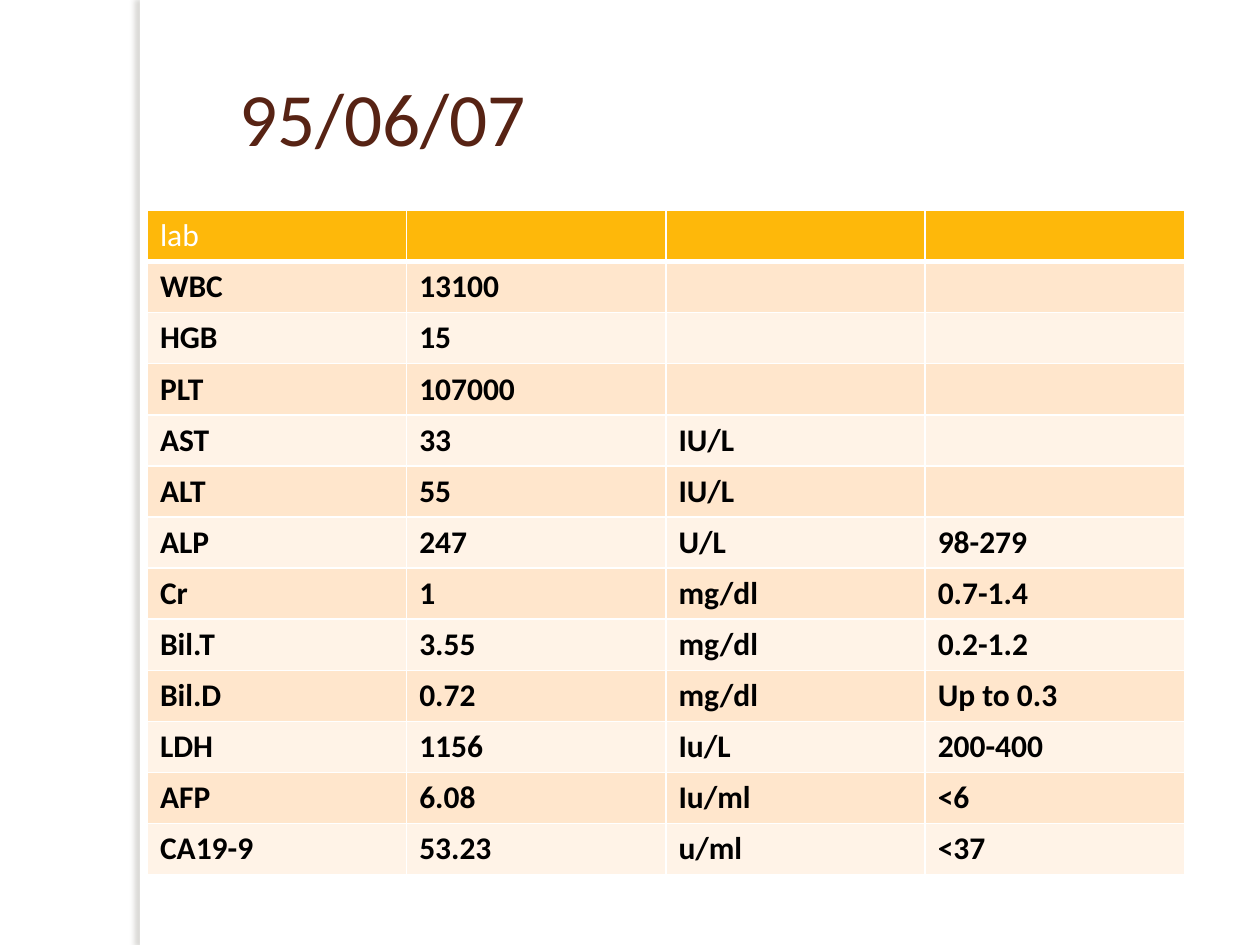
from lxml.etree import SubElement
from pptx import Presentation
from pptx.dml.color import RGBColor
from pptx.enum.shapes import MSO_SHAPE as Shape
from pptx.enum.text import MSO_ANCHOR as Anchor
from pptx.oxml.ns import qn
from pptx.util import Inches, Pt

TITLE = "95/06/07"
LABS = [
    ("lab", "", "", ""),
    ("WBC", "13100", "", ""),
    ("HGB", "15", "", ""),
    ("PLT", "107000", "", ""),
    ("AST", "33", "IU/L", ""),
    ("ALT", "55", "IU/L", ""),
    ("ALP", "247", "U/L", "98-279"),
    ("Cr", "1", "mg/dl", "0.7-1.4"),
    ("Bil.T", "3.55", "mg/dl", "0.2-1.2"),
    ("Bil.D", "0.72", "mg/dl", "Up to 0.3"),
    ("LDH", "1156", "Iu/L", "200-400"),
    ("AFP", "6.08", "Iu/ml", "<6"),
    ("CA19-9", "53.23", "u/ml", "<37"),
]
WHITE, HEADER, BANDS = "FFFFFF", "FEB80A", ("FFF3E7", "FFE6CC")
TITLE_FORMAT = {"name": "Calibri", "size": Pt(43)}
HEADER_FORMAT = {"name": "Calibri", "size": Pt(18), "bold": False}
BODY_FORMAT = {**HEADER_FORMAT, "bold": True}
WIDTH, HEIGHT = 10, 7.5
TABLE_AREA = (1.17, 1.67, 8.23, 5.27)


def paint(fill, color):
    fill.solid()
    fill.fore_color.rgb = RGBColor.from_string(color)


def style(font, formats, color):
    for name, value in formats.items():
        setattr(font, name, value)
    font.color.rgb = RGBColor.from_string(color)


def add_color(parent, color):
    return SubElement(parent, qn("a:srgbClr"), val=color)


def add_borders(cell, bottom):
    properties = cell._tc.get_or_add_tcPr()
    for side, points in zip("LRTB", (1, 1, 1, bottom)):
        line = SubElement(properties, qn(f"a:ln{side}"), w=str(Pt(points)))
        add_color(SubElement(line, qn("a:solidFill")), WHITE)


deck = Presentation()
deck.slide_width, deck.slide_height = Inches(WIDTH), Inches(HEIGHT)
page = deck.slides.add_slide(deck.slide_layouts[6])
paint(page.background.fill, WHITE)

# Vertical strip with a soft shadow to the left
strip = page.shapes.add_shape(
    Shape.RECTANGLE, Inches(1.11), 0, Inches(0.08), deck.slide_height)
paint(strip.fill, WHITE)
strip.line.fill.background()
strip.shadow.inherit = False
effects = strip._element.spPr.find(qn("a:effectLst"))
shadow = SubElement(effects, qn("a:outerShdw"), blurRad=str(Pt(3)),
                    dist=str(Pt(3)), dir=str(180 * 60000), rotWithShape="0")
SubElement(add_color(shadow, "736F63"), qn("a:alpha"), val="25000")

# Lab results
table = page.shapes.add_table(
    len(LABS), len(LABS[0]), *map(Inches, TABLE_AREA)).table
for column in table.columns:
    column.width = Inches(TABLE_AREA[2] / len(LABS[0]))
for row in table.rows:
    row.height = Inches(TABLE_AREA[3] / len(LABS))
for r, values in enumerate(LABS):
    is_header = r == 0
    for c, value in enumerate(values):
        cell = table.cell(r, c)
        add_borders(cell, bottom=3 if is_header else 1)
        paint(cell.fill, HEADER if is_header else BANDS[r % 2])
        para = cell.text_frame.paragraphs[0]
        if value:
            span = para.add_run()
            span.text = value
            style(span.font, HEADER_FORMAT if is_header else BODY_FORMAT,
                  WHITE if is_header else "000000")

# Date title
box = page.shapes.add_textbox(*map(Inches, (1.8, 0.3, 8.2, 1.25)))
frame = box.text_frame
frame.word_wrap = True
frame.vertical_anchor = Anchor.MIDDLE
span = frame.paragraphs[0].add_run()
span.text = TITLE
style(span.font, TITLE_FORMAT, "572314")

deck.save("out.pptx")
